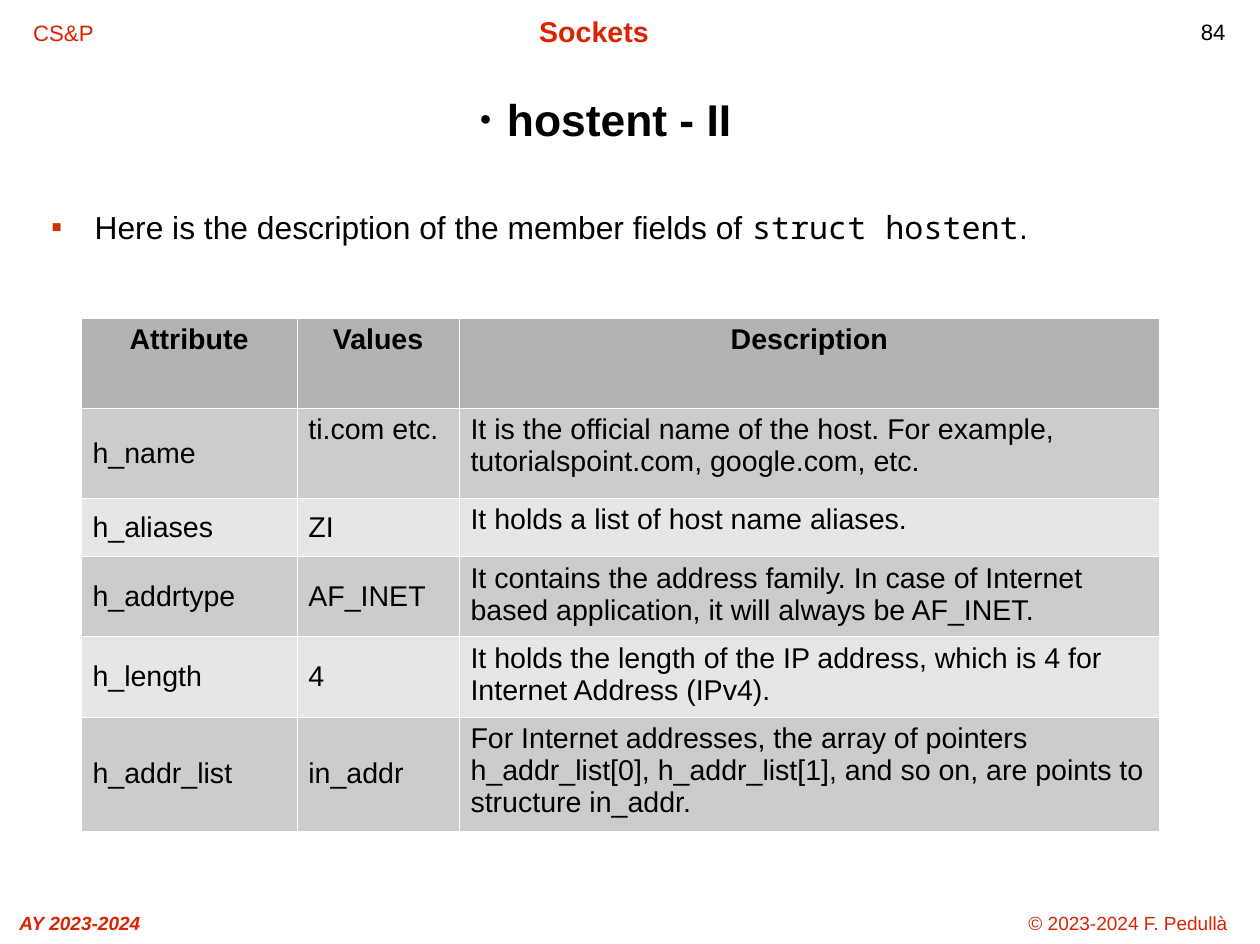
from lxml.etree import SubElement
from pptx import Presentation
from pptx.dml.color import RGBColor
from pptx.enum.text import MSO_ANCHOR as Anchor, PP_ALIGN as Align
from pptx.oxml.ns import qn
from pptx.util import Pt

EMU_PER_PX = 9144
RED, BLACK, WHITE = "DC2300", "000000", "FFFFFF"
HEADER_GREY, DARK_ROW, LIGHT_ROW = "B3B3B3", "CCCCCC", "E6E6E6"

COLUMN_WIDTHS = [189, 142, 613]
ROW_HEIGHTS = [79, 79, 51, 33, 54, 54]
HEADINGS = ["Attribute", "Values", "Description"]
FIELDS = [
    ("h_name", "ti.com etc.",
     "It is the official name of the host. For example, "
     "tutorialspoint.com, google.com, etc."),
    ("h_aliases", "ZI", "It holds a list of host name aliases."),
    ("h_addrtype", "AF_INET",
     "It contains the address family. In case of Internet based "
     "application, it will always be AF_INET."),
    ("h_length", "4",
     "It holds the length of the IP address, which is 4 for "
     "Internet Address (IPv4)."),
    ("h_addr_list", "in_addr",
     "For Internet addresses, the array of pointers h_addr_list[0], "
     "h_addr_list[1], and so on, are points to structure in_addr."),
]


def px(length):
    return length * EMU_PER_PX


def color(hex_value):
    return RGBColor.from_string(hex_value)


def add_run(paragraph, text, size=18, font="Arial", fill=BLACK,
            bold=False, italic=False):
    run = paragraph.add_run()
    run.text = text
    run.font.size = Pt(size)
    run.font.name = font
    run.font.color.rgb = color(fill)
    run.font.bold = bold
    run.font.italic = italic


def add_bullet(paragraph, char, fill, indent, percent=100):
    props = paragraph._p.get_or_add_pPr()
    props.set("marL", str(px(indent)))
    props.set("indent", str(px(-indent)))
    bullet_color = SubElement(props, qn("a:buClr"))
    SubElement(bullet_color, qn("a:srgbClr"), val=fill)
    SubElement(props, qn("a:buSzPct"), val=str(percent * 1000))
    SubElement(props, qn("a:buFont"), typeface="Arial")
    SubElement(props, qn("a:buChar"), char=char)


def add_text_box(slide, left, top, width, height, align=Align.CENTER,
                 anchor=Anchor.TOP):
    frame = slide.shapes.add_textbox(
        px(left), px(top), px(width), px(height)).text_frame
    frame.word_wrap = True
    frame.vertical_anchor = anchor
    paragraph = frame.paragraphs[0]
    paragraph.alignment = align
    return paragraph


def style_cell(cell, fill):
    props = cell._tc.get_or_add_tcPr()
    for side in ("lnL", "lnR", "lnT", "lnB"):
        border = SubElement(props, qn(f"a:{side}"), w="762")
        solid = SubElement(border, qn("a:solidFill"))
        SubElement(solid, qn("a:srgbClr"), val=WHITE)
    cell.fill.solid()
    cell.fill.fore_color.rgb = color(fill)
    cell.margin_left = cell.margin_right = px(10)
    cell.margin_top = cell.margin_bottom = px(5)


def add_field_table(slide, left, top):
    table = slide.shapes.add_table(
        len(ROW_HEIGHTS), len(COLUMN_WIDTHS), px(left), px(top),
        px(sum(COLUMN_WIDTHS)), px(sum(ROW_HEIGHTS))).table
    table.first_row = table.horz_banding = False
    for column, width in zip(table.columns, COLUMN_WIDTHS):
        column.width = px(width)
    for row, height in zip(table.rows, ROW_HEIGHTS):
        row.height = px(height)

    for r, values in enumerate([HEADINGS, *FIELDS]):
        is_header = r == 0
        row_fill = HEADER_GREY if is_header else DARK_ROW if r % 2 else LIGHT_ROW
        for c, value in enumerate(values):
            cell = table.cell(r, c)
            style_cell(cell, row_fill)
            # Names and values sit mid-row, except the first value
            centred = r > 0 and (c == 0 or (c == 1 and r > 1))
            cell.vertical_anchor = Anchor.MIDDLE if centred else Anchor.TOP
            paragraph = cell.text_frame.paragraphs[0]
            paragraph.alignment = Align.CENTER if is_header else Align.LEFT
            add_run(paragraph, value, bold=is_header)


def main():
    deck = Presentation()
    deck.slide_width, deck.slide_height = px(1103), px(826)
    slide = deck.slides.add_slide(deck.slide_layouts[6])

    # Header and footer
    add_run(add_text_box(slide, 1021, 11, 82, 39), "84", size=14)
    add_run(add_text_box(slide, 873, 793, 229, 33),
            "© 2023-2024 F. Pedullà", size=12, fill=RED)
    add_run(add_text_box(slide, 0, 793, 140, 33), "AY 2023-2024",
            size=12, fill=RED, bold=True, italic=True)
    add_run(add_text_box(slide, 370, 7, 300, 33), "Sockets",
            fill=RED, bold=True)
    add_run(add_text_box(slide, 13, 12, 85, 33), "CS&P", size=14, fill=RED)

    # Title
    title = add_text_box(slide, 43, 49, 974, 110, anchor=Anchor.MIDDLE)
    add_bullet(title, "●", BLACK, indent=24, percent=45)
    add_run(title, "hostent - II", size=28, bold=True)

    # Introduction
    intro = add_text_box(slide, 35, 177, 989, 571, align=Align.LEFT)
    add_bullet(intro, "▪", "CC3300", indent=38)
    add_run(intro, "Here is the description of the member fields of ", size=20)
    add_run(intro, "struct hostent", size=20, font="Noto Sans Mono")
    add_run(intro, ".", size=20)

    # Member fields
    add_field_table(slide, 71, 278)

    deck.save("out.pptx")


if __name__ == "__main__":
    main()
